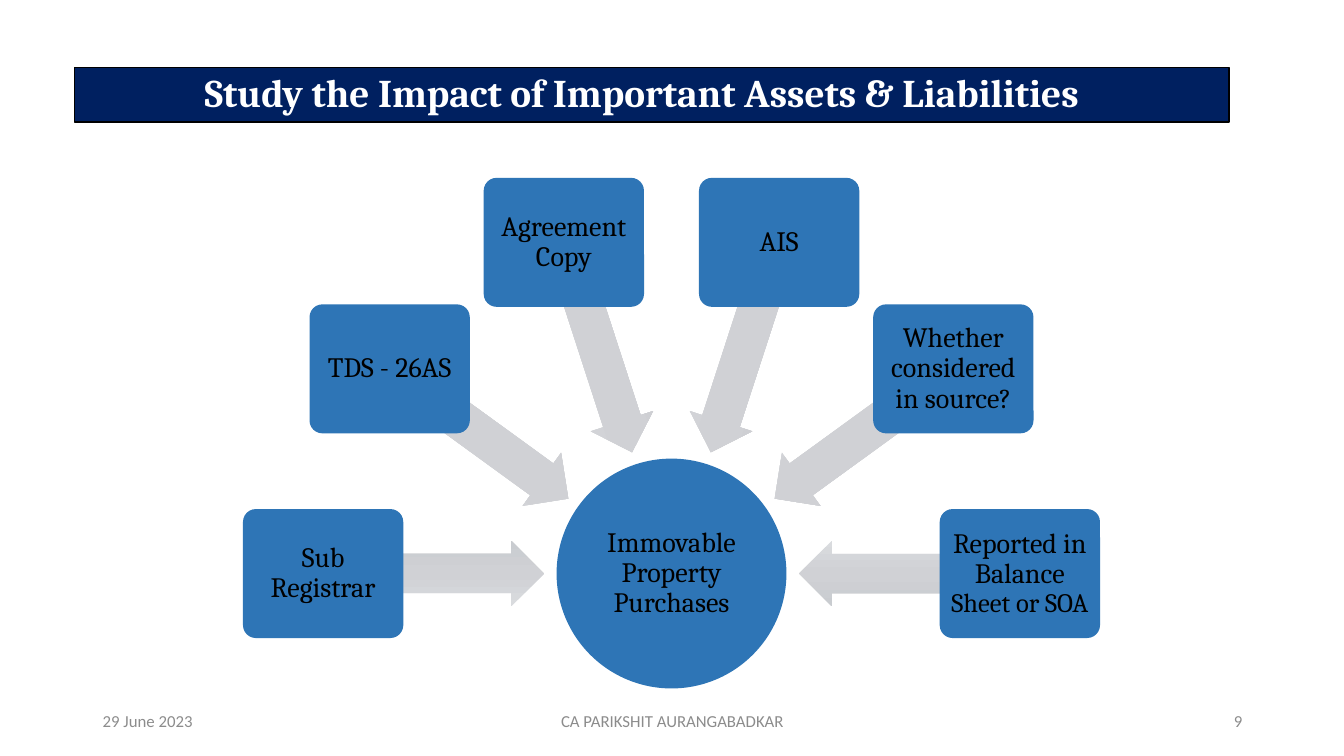
import copy
import math

import pptx
import pptx.dml.color
import pptx.enum.shapes
import pptx.enum.text
import pptx.oxml.ns
import pptx.util

Inches = pptx.util.Inches
Pt = pptx.util.Pt
RGBColor = pptx.dml.color.RGBColor
Shape = pptx.enum.shapes.MSO_SHAPE
Align = pptx.enum.text.PP_ALIGN

NAVY = RGBColor(0x00, 0x20, 0x60)
BLUE = RGBColor(0x2E, 0x75, 0xB6)
BLACK = RGBColor(0x00, 0x00, 0x00)
WHITE = RGBColor(0xFF, 0xFF, 0xFF)
GRAY = RGBColor(0x8C, 0x8C, 0x8C)
ARROW_STOPS = [
    (0, RGBColor(0xD9, 0xDB, 0xDE)),
    (0.5, RGBColor(0xD0, 0xD1, 0xD5)),
    (1, RGBColor(0xC9, 0xCC, 0xD0)),
]

# Radial diagram: sizes and distances from the hub, in inches
HUB_X, HUB_Y, HUB_SIZE = 6.66, 5.69, 2.28
BOX_WIDTH, BOX_HEIGHT, BOX_RADIUS = 1.59, 1.28, 3.455
ARROW_WIDTH, ARROW_HEIGHT, ARROW_RADIUS = 2.19, 0.65, 2.36
FIRST_ANGLE, ANGLE_STEP = 180, 36

# Each box holds runs of (text, size)
BOXES = [
    [("Sub Registrar", 20)],
    [("TDS - 26AS", 20)],
    [("Agreement Copy", 20)],
    [("AIS", 20)],
    [("Whether considered in source?", 20)],
    [("Reported in Balance", 20), (" Sheet or SOA", 19)],
]

FOOTERS = [
    ("29 June 2023", 0.92, 3, Align.LEFT),
    ("CA PARIKSHIT AURANGABADKAR", 4.42, 4.5, Align.CENTER),
    ("9", 9.42, 3, Align.RIGHT),
]


def add_centered_shape(slide, kind, x, y, width, height):
    """Add a preset shape without line or shadow, centred on x, y."""
    shape = slide.shapes.add_shape(
        kind, Inches(x - width / 2), Inches(y - height / 2),
        Inches(width), Inches(height))
    shape.shadow.inherit = False
    shape.line.fill.background()
    return shape


def fill_solid(shape, color):
    shape.fill.solid()
    shape.fill.fore_color.rgb = color


def write_text(shape, runs, font_name, color, alignment):
    frame = shape.text_frame
    frame.word_wrap = True
    frame.vertical_anchor = pptx.enum.text.MSO_ANCHOR.MIDDLE
    paragraph = frame.paragraphs[0]
    paragraph.alignment = alignment
    paragraph.font.name = font_name
    paragraph.font.color.rgb = color
    for text, size in runs:
        run = paragraph.add_run()
        run.text = text
        run.font.name = font_name
        run.font.size = Pt(size)
        run.font.color.rgb = color
    return paragraph


def write_label(shape, runs, inset):
    frame = shape.text_frame
    frame.margin_left = frame.margin_right = Inches(inset)
    frame.margin_top = frame.margin_bottom = Inches(inset)
    paragraph = write_text(shape, runs, "Cambria", BLACK, Align.CENTER)
    paragraph.line_spacing = 0.9


def add_title(slide, text):
    title = add_centered_shape(slide, Shape.RECTANGLE, 6.465, 0.94, 11.45, 0.54)
    fill_solid(title, NAVY)
    title.line.color.rgb = BLACK
    title.line.width = Pt(1)
    title.text_frame.margin_right = Inches(0.3)
    paragraph = write_text(title, [(text, 28)], "Cambria", WHITE, Align.CENTER)
    paragraph.line_spacing = 0.9
    paragraph.runs[0].font.bold = True


def add_hub(slide, text):
    hub = add_centered_shape(
        slide, Shape.OVAL, HUB_X, HUB_Y, HUB_SIZE, HUB_SIZE)
    fill_solid(hub, BLUE)
    write_label(hub, [(text, 20)], 0.01)


def point_around_hub(angle, radius):
    radians = math.radians(angle)
    return (HUB_X + radius * math.cos(radians),
            HUB_Y + radius * math.sin(radians))


def add_arrow(slide, angle):
    x, y = point_around_hub(angle, ARROW_RADIUS)
    arrow = add_centered_shape(
        slide, Shape.LEFT_ARROW, x, y, ARROW_WIDTH, ARROW_HEIGHT)
    arrow.rotation = angle % 360
    arrow.adjustments[0] = 0.6
    arrow.adjustments[1] = 0.5
    arrow.fill.gradient()
    arrow.fill.gradient_angle = 270
    # A new gradient has two stops; add the third
    stop_list = next(arrow.element.iter(pptx.oxml.ns.qn("a:gsLst")))
    stop_list.append(copy.deepcopy(stop_list[0]))
    for stop, (position, color) in zip(arrow.fill.gradient_stops, ARROW_STOPS):
        stop.position = position
        stop.color.rgb = color


def add_box(slide, angle, runs):
    x, y = point_around_hub(angle, BOX_RADIUS)
    box = add_centered_shape(
        slide, Shape.ROUNDED_RECTANGLE, x, y, BOX_WIDTH, BOX_HEIGHT)
    box.adjustments[0] = 0.1
    fill_solid(box, BLUE)
    write_label(box, runs, 0.04)


def add_footer(slide, text, left, width, alignment):
    footer = slide.shapes.add_textbox(
        Inches(left), Inches(6.95), Inches(width), Inches(0.4))
    write_text(footer, [(text, 12)], "Calibri", GRAY, alignment)


def main():
    presentation = pptx.Presentation()
    presentation.slide_width = Inches(13.33)
    presentation.slide_height = Inches(7.5)
    slide = presentation.slides.add_slide(presentation.slide_layouts[6])

    # Title bar
    add_title(slide, "Study the Impact of Important Assets & Liabilities")

    # Hub with arrows and boxes around it
    add_hub(slide, "Immovable Property Purchases")
    for index, runs in enumerate(BOXES):
        angle = FIRST_ANGLE + index * ANGLE_STEP
        add_arrow(slide, angle)
        add_box(slide, angle, runs)

    # Footer line
    for footer in FOOTERS:
        add_footer(slide, *footer)

    presentation.save("out.pptx")


if __name__ == "__main__":
    main()
